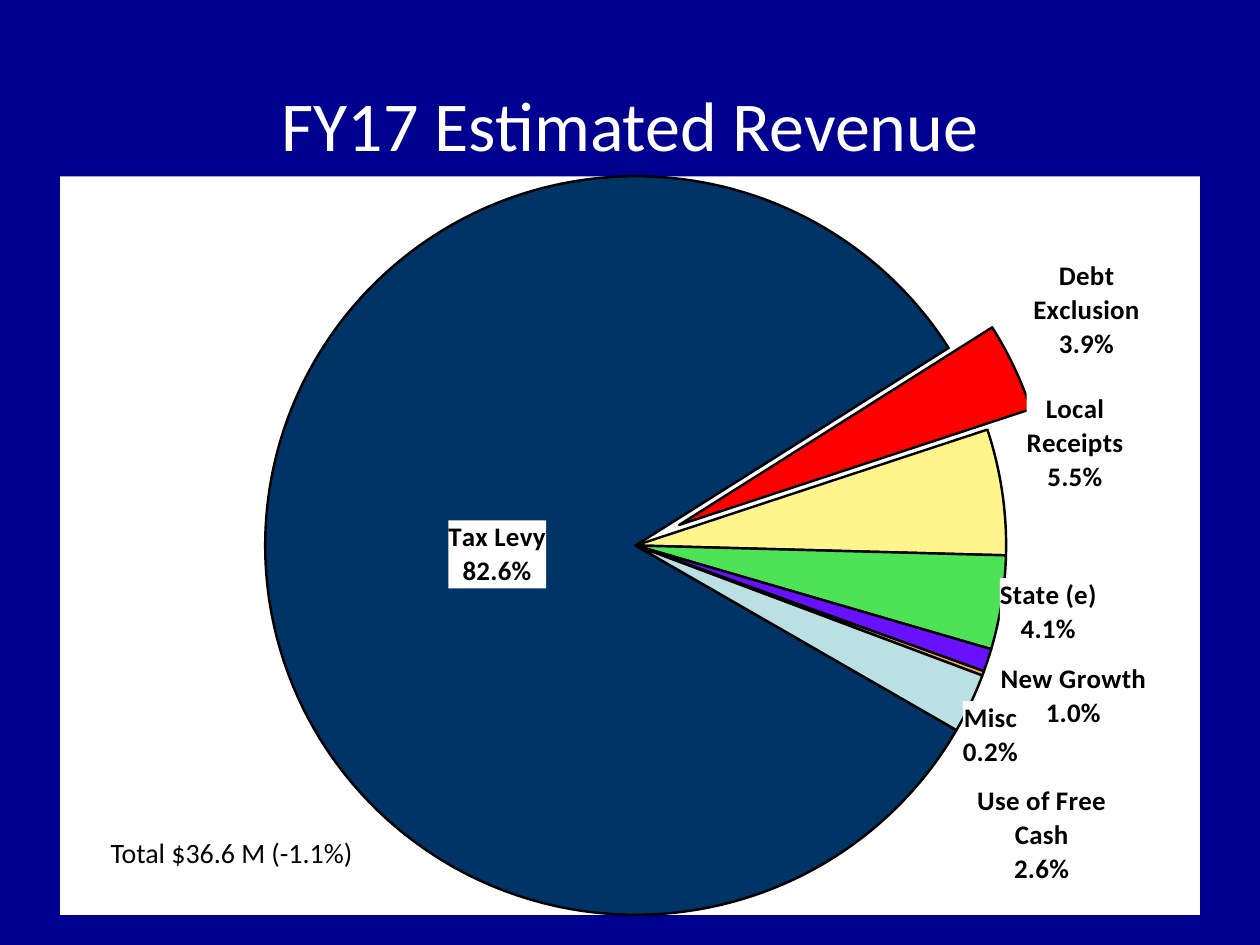
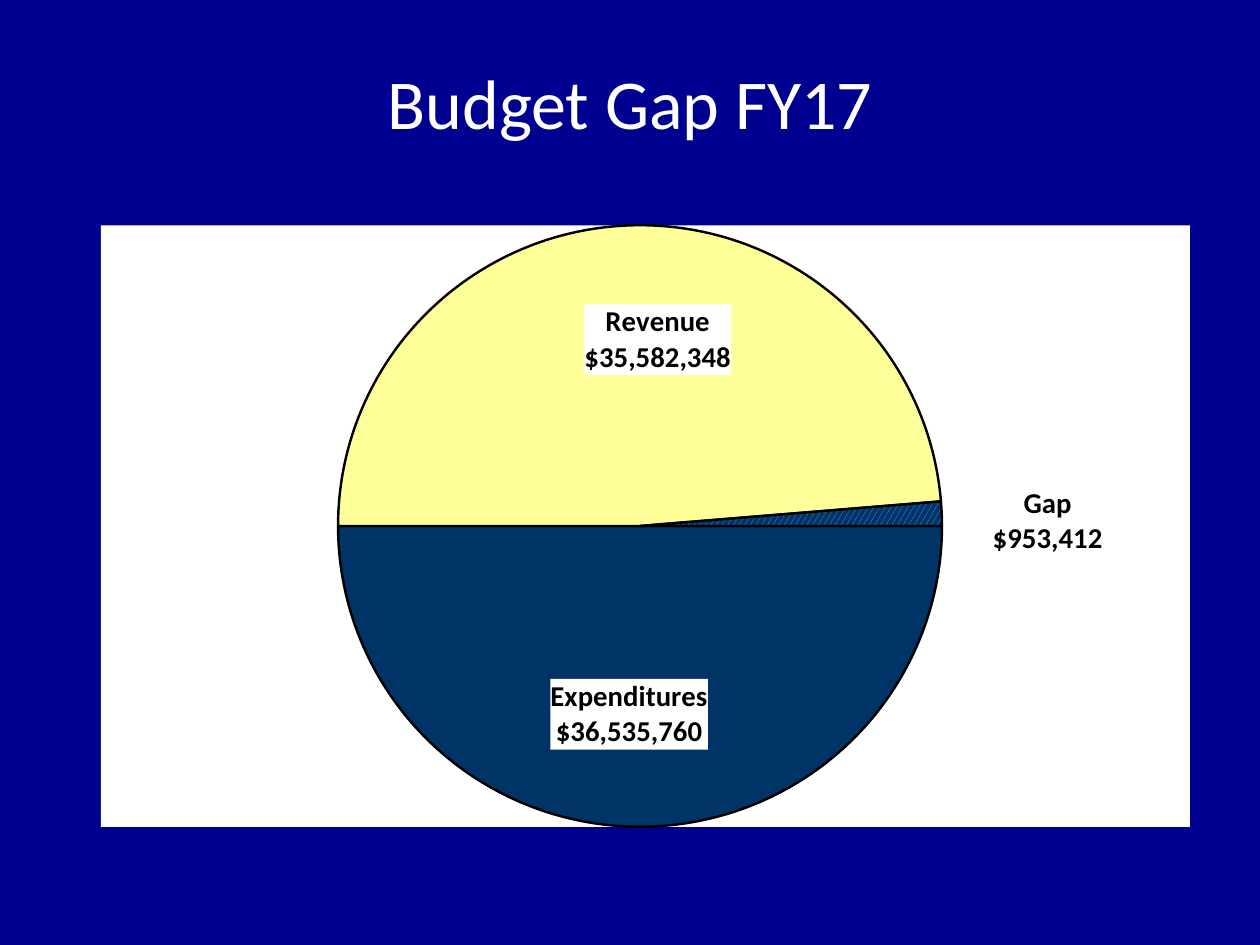
import copy

import pptx
import pptx.chart.data
import pptx.dml.color
import pptx.enum.chart
import pptx.enum.dml
import pptx.enum.text
import pptx.oxml
import pptx.oxml.ns
import pptx.util

RGB = pptx.dml.color.RGBColor
qn = pptx.oxml.ns.qn
NAMESPACES = pptx.oxml.ns.nsdecls("c", "a")

PX = 914400 / 126
FONT = "Calibri"
NAVY, WHITE, BLACK = RGB(0, 0, 0x90), RGB(255, 255, 255), RGB(0, 0, 0)
DEEP_BLUE, RED, CREAM = RGB(0, 0x33, 0x66), RGB(255, 0, 0), RGB(0xFF, 0xF5, 0x8C)
GREEN, VIOLET, ORANGE = RGB(0x4E, 0xE2, 0x57), RGB(0x67, 0x11, 0xFF), RGB(0xFE, 0xA7, 0x46)
PALE_BLUE, LEMON, SKY = RGB(0xBB, 0xE0, 0xE3), RGB(255, 255, 0x99), RGB(0x63, 0xAA, 0xFE)

# Slices: name, value, colour, label position, label shift in px (None = automatic)
REVENUE = {
    "title": "FY17 Estimated Revenue",
    "title_box": (123, 21, 1014, 148),
    "chart_box": (60, 175, 1140, 741),
    "plot": (0.18, 0, 0.65, 1),
    "start": 120,
    "label_size": 15.4,
    "number_format": '0.0"%"',
    "exploded": {1: 13},
    "hatched": None,
    "slices": [
        ("Tax Levy", 82.6, DEEP_BLUE, "ctr", (47, 5)),
        ("Debt Exclusion", 3.9, RED, "outEnd", (13, -3)),
        ("Local Receipts", 5.5, CREAM, "outEnd", (17, 4)),
        ("State (e)", 4.1, GREEN, "outEnd", (-9, -26)),
        ("New Growth", 1.0, VIOLET, "outEnd", (6, -1)),
        ("Misc", 0.2, ORANGE, "outEnd", (-27, 25)),
        ("Use of Free Cash", 2.6, PALE_BLUE, None, None),
    ],
}
GAP = {
    "title": "Budget Gap FY17",
    "title_box": (123, 53, 1014, 94),
    "chart_box": (101, 224, 1089, 604),
    "plot": (0.17, 0, 0.65, 1),
    "start": 90,
    "label_size": 16.4,
    "number_format": "\\$#,##0",
    "exploded": {},
    "hatched": 2,
    "slices": [
        ("Expenditures", 36535760, DEEP_BLUE, "ctr", (-11, 38)),
        ("Revenue", 35582348, LEMON, "ctr", (24, -36)),
        ("Gap", 953412, DEEP_BLUE, "outEnd", (44, 8)),
    ],
}
TOTAL = "Total $36.6 M (-1.1%)"
TOTAL_BOX = (95, 829, 273, 47)


def emu(box):
    return [round(length * PX) for length in box]


def xml(tag, content):
    return pptx.oxml.parse_xml(f"<c:{tag} {NAMESPACES}>{content}</c:{tag}>")


def layout(**settings):
    values = "".join(f'<c:{key} val="{value}"/>' for key, value in settings.items())
    return xml("layout", f"<c:manualLayout>{values}</c:manualLayout>")


def white_fill():
    return xml("spPr", f'<a:solidFill><a:srgbClr val="{WHITE}"/></a:solidFill><a:ln><a:noFill/></a:ln>')


def style_font(font, size, color, bold=False):
    font.name, font.size, font.bold = FONT, pptx.util.Pt(size), bold
    font.color.rgb = color


def add_titled_slide(deck, title, box):
    slide = deck.slides.add_slide(deck.slide_layouts[5])
    heading = slide.shapes.title
    heading.left, heading.top, heading.width, heading.height = emu(box)
    frame = heading.text_frame
    frame.text = title
    frame.vertical_anchor = pptx.enum.text.MSO_ANCHOR.BOTTOM
    frame.margin_left = frame.margin_right = pptx.util.Inches(0.03)
    frame.margin_top = frame.margin_bottom = pptx.util.Inches(0.03)
    frame.paragraphs[0].alignment = pptx.enum.text.PP_ALIGN.CENTER
    style_font(frame.paragraphs[0].runs[0].font, 40, WHITE)
    return slide


def color_slices(series, content):
    for index, (_, _, color, _, _) in enumerate(content["slices"]):
        slice_format = series.points[index].format
        slice_format.line.color.rgb = BLACK
        slice_format.line.width = pptx.util.Pt(1.4)
        fill = slice_format.fill
        if index == content["hatched"]:
            fill.patterned()
            fill.pattern = pptx.enum.dml.MSO_PATTERN.LARGE_CONFETTI
            fill.fore_color.rgb, fill.back_color.rgb = SKY, color
        else:
            fill.solid()
            fill.fore_color.rgb = color
    for point in series._element.findall(qn("c:dPt")):
        index = int(point.find(qn("c:idx")).get("val"))
        if index in content["exploded"]:
            explosion = pptx.oxml.parse_xml(
                f'<c:explosion {NAMESPACES} val="{content["exploded"][index]}"/>')
            point.find(qn("c:spPr")).addprevious(explosion)


def label_slices(series, content):
    """Style the labels once, then repeat that style for each label that is shifted."""
    labels = series.data_labels
    labels.show_category_name = labels.show_value = True
    labels.show_percentage = False
    labels.number_format = content["number_format"]
    labels.number_format_is_linked = False
    style_font(labels.font, content["label_size"], BLACK, bold=True)
    root = labels._element
    root.find(qn("c:numFmt")).addnext(white_fill())
    root.find(qn("c:showBubbleSize")).addnext(xml("separator", "\n"))
    leaders = root.find(qn("c:showLeaderLines"))
    if leaders is not None:
        leaders.set("val", "0")
    shared = [part for part in root if part.tag != qn("c:showLeaderLines")]

    _, _, width, height = content["chart_box"]
    shifted = []
    for index, (_, _, _, position, shift) in enumerate(content["slices"]):
        if shift is None:
            continue
        label = xml("dLbl", f'<c:idx val="{index}"/>')
        label.append(layout(x=round(shift[0] / width, 3), y=round(shift[1] / height, 3)))
        for part in shared:
            label.append(copy.deepcopy(part))
        place = pptx.oxml.parse_xml(f'<c:dLblPos {NAMESPACES} val="{position}"/>')
        label.find(qn("c:showLegendKey")).addprevious(place)
        shifted.append(label)
    for label in reversed(shifted):
        root.insert(0, label)


def add_pie(slide, content):
    data = pptx.chart.data.CategoryChartData()
    data.categories = [name for name, *_ in content["slices"]]
    data.add_series("Series 1", [value for _, value, *_ in content["slices"]])
    chart = slide.shapes.add_chart(
        pptx.enum.chart.XL_CHART_TYPE.PIE, *emu(content["chart_box"]), data).chart
    chart.has_legend = chart.has_title = False
    style_font(chart.font, content["label_size"], BLACK, bold=True)
    chart.element.find(qn("c:chart")).addnext(white_fill())

    area = chart.element.find(".//" + qn("c:plotArea"))
    for old in area.findall(qn("c:layout")):
        area.remove(old)
    x, y, w, h = content["plot"]
    area.insert(0, layout(layoutTarget="inner", xMode="edge", yMode="edge", x=x, y=y, w=w, h=h))
    pie = area.find(qn("c:pieChart"))
    for old in pie.findall(qn("c:firstSliceAng")):
        pie.remove(old)
    pie.append(pptx.oxml.parse_xml(f'<c:firstSliceAng {NAMESPACES} val="{content["start"]}"/>'))

    plot = chart.plots[0]
    plot.vary_by_categories = True
    color_slices(plot.series[0], content)
    label_slices(plot.series[0], content)


def add_total(slide):
    frame = slide.shapes.add_textbox(*emu(TOTAL_BOX)).text_frame
    frame.word_wrap = True
    frame.text = TOTAL
    frame.paragraphs[0].alignment = pptx.enum.text.PP_ALIGN.CENTER
    style_font(frame.paragraphs[0].runs[0].font, 16, BLACK)


def main():
    deck = pptx.Presentation()
    deck.slide_width, deck.slide_height = emu((1260, 945))
    background = deck.slide_master.background.fill
    background.solid()
    background.fore_color.rgb = NAVY
    for content in (REVENUE, GAP):
        slide = add_titled_slide(deck, content["title"], content["title_box"])
        add_pie(slide, content)
        if content is REVENUE:
            add_total(slide)
    deck.save("out.pptx")


if __name__ == "__main__":
    main()
